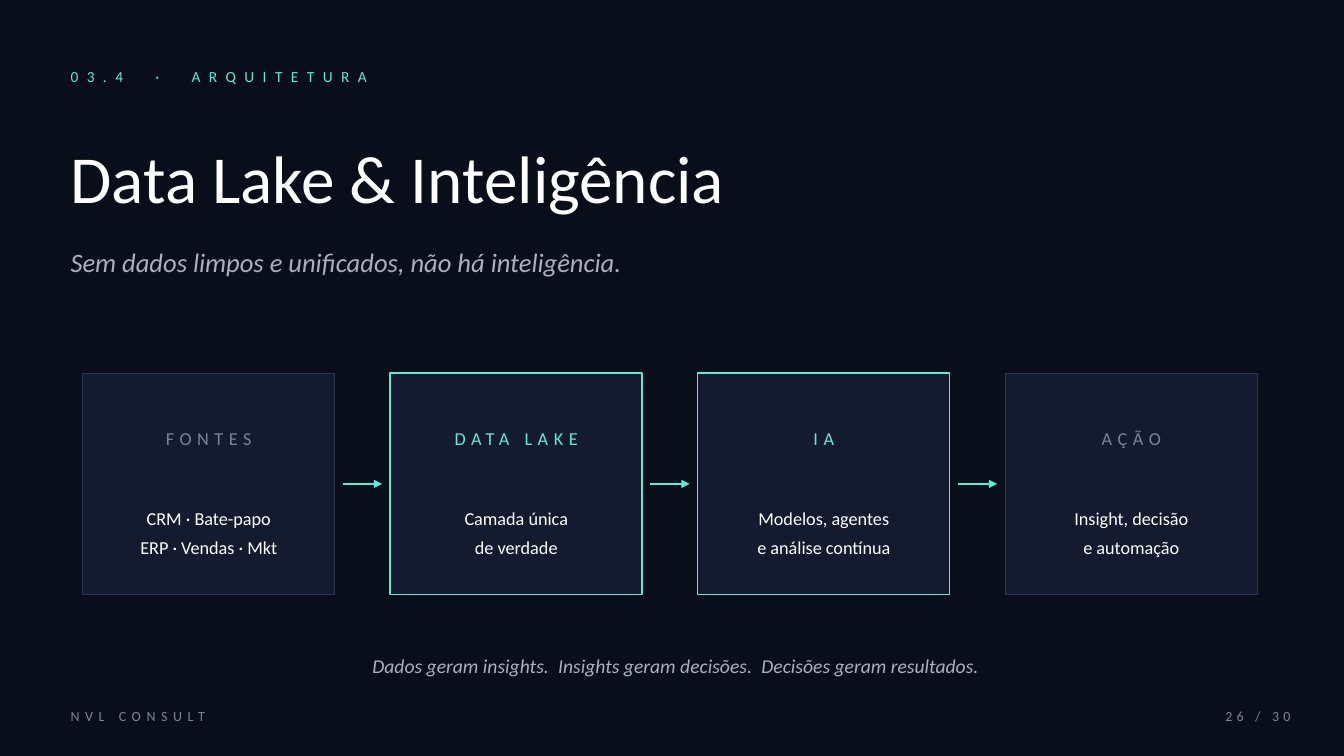
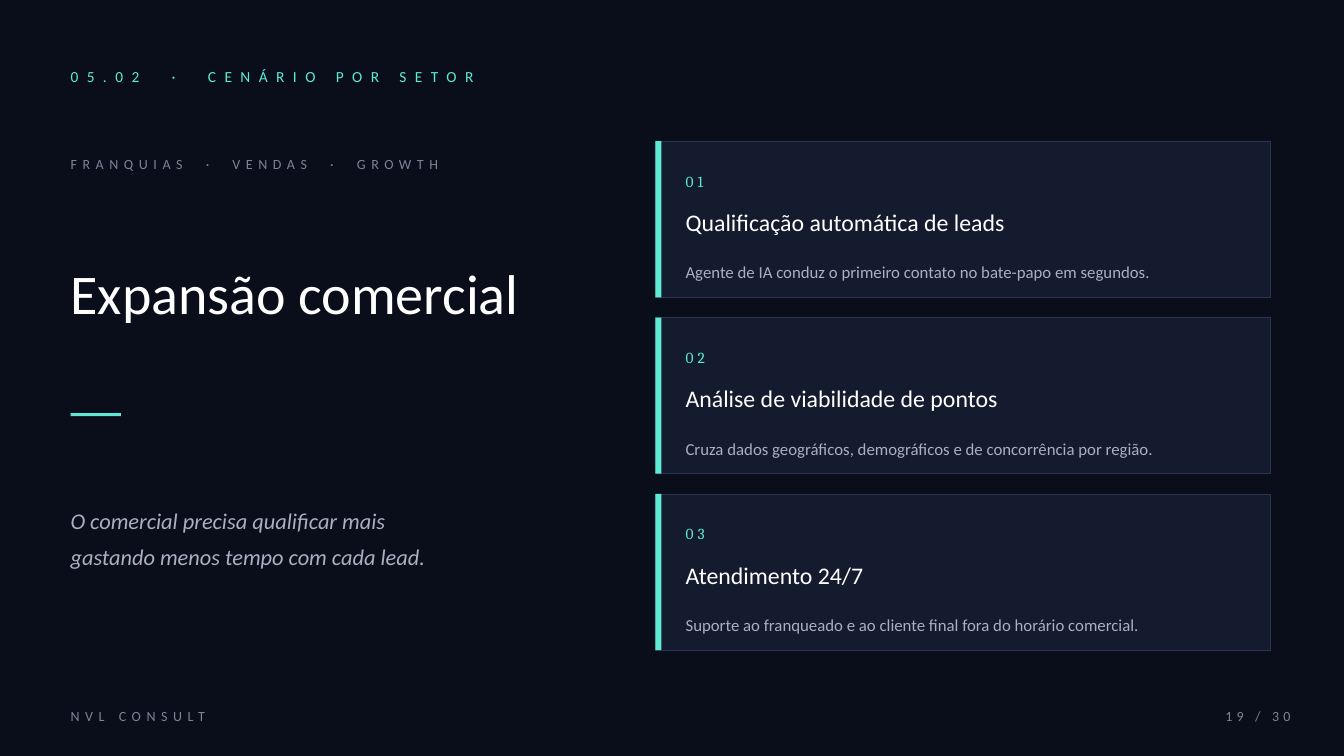
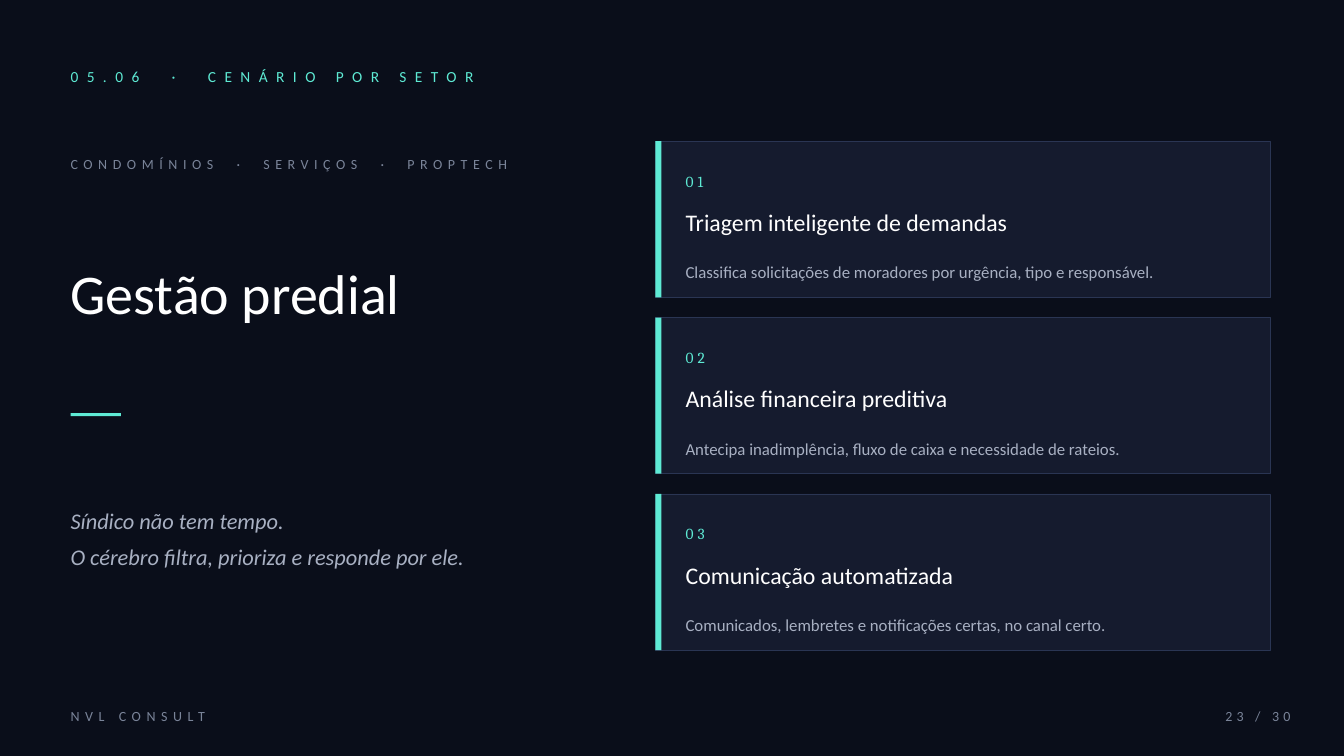
from dataclasses import dataclass

from lxml import etree
from pptx import Presentation
from pptx.dml.color import RGBColor
from pptx.enum.shapes import MSO_CONNECTOR, MSO_SHAPE
from pptx.enum.text import MSO_ANCHOR, MSO_AUTO_SIZE, PP_ALIGN
from pptx.oxml.ns import qn
from pptx.util import Pt

LEFT, CENTER, RIGHT = PP_ALIGN.LEFT, PP_ALIGN.CENTER, PP_ALIGN.RIGHT
MIDDLE = MSO_ANCHOR.MIDDLE
NO_AUTOFIT = MSO_AUTO_SIZE.NONE
RECTANGLE = MSO_SHAPE.RECTANGLE
STRAIGHT = MSO_CONNECTOR.STRAIGHT

PX = 9144  # 100 px to the inch
SPACE_WIDTH = 0.23  # width of a space, in ems

COLORS = {
    "background": "0A0E1A",
    "card": "151B2E",
    "border": "2A3553",
    "accent": "5EEAD4",
    "white": "FFFFFF",
    "soft": "A8B0C2",
    "muted": "7A8499",
}


@dataclass(frozen=True)
class Style:
    size: int
    color: str
    align: int = LEFT
    spacing: int = 0
    italic: bool = False
    leading: float = 1.0
    font: str = "Calibri"


STYLES = {
    "section": Style(11, "accent", spacing=6),
    "title": Style(48, "white"),
    "subtitle": Style(19, "soft", italic=True),
    "step": Style(13, "muted", CENTER, spacing=4),
    "step_accent": Style(13, "accent", CENTER, spacing=4),
    "step_detail": Style(13, "white", CENTER, leading=1.35),
    "closing": Style(14, "soft", CENTER, italic=True),
    "label": Style(10, "muted", spacing=4),
    "page": Style(10, "muted", RIGHT, spacing=3),
    "sector": Style(40, "white"),
    "quote": Style(16, "soft", italic=True, leading=1.35),
    "number": Style(11, "accent", spacing=3, font="Cambria"),
    "card_title": Style(17, "white"),
    "card_detail": Style(12, "soft", leading=1.25),
}


def rgb(name):
    return RGBColor.from_string(COLORS[name])


# Text
def add_run(paragraph, text, style, spacing):
    run = paragraph.add_run()
    run.text = text
    run.font.name = style.font
    run.font.size = Pt(style.size)
    run.font.italic = style.italic
    run.font.color.rgb = rgb(style.color)
    if spacing:
        run._r.get_or_add_rPr().set("spc", str(round(spacing * 100)))


def write(shape, lines, style):
    """Write one paragraph per line; the parts of a tuple get wide gaps."""
    frame = shape.text_frame
    frame.word_wrap = True
    frame.auto_size = NO_AUTOFIT
    frame.vertical_anchor = MIDDLE
    frame.margin_left = frame.margin_top = 0
    frame.margin_right = frame.margin_bottom = 0
    wide_gap = 2 * style.spacing + SPACE_WIDTH * style.size
    for index, line in enumerate(lines):
        paragraph = frame.add_paragraph() if index else frame.paragraphs[0]
        paragraph.alignment = style.align
        paragraph.line_spacing = style.leading
        paragraph.space_before = Pt(0)
        parts = line if isinstance(line, tuple) else (line,)
        for position, part in enumerate(parts):
            if position:
                add_run(paragraph, " ", style, wide_gap)
            add_run(paragraph, part, style, style.spacing)


def add_text(slide, box, lines, style_name):
    shape = slide.shapes.add_textbox(*(value * PX for value in box))
    write(shape, lines, STYLES[style_name])


def fill_placeholder(shape, box, lines, style_name):
    shape.left, shape.top, shape.width, shape.height = (v * PX for v in box)
    write(shape, lines, STYLES[style_name])
    for paragraph in shape.text_frame.paragraphs:
        properties = paragraph._p.get_or_add_pPr()
        properties.set("marL", "0")
        properties.set("indent", "0")
        etree.SubElement(properties, qn("a:buNone"))


# Shapes
def add_rectangle(slide, box, fill, border=None, width=0.5):
    shape = slide.shapes.add_shape(RECTANGLE, *(value * PX for value in box))
    shape.shadow.inherit = False
    shape.fill.solid()
    shape.fill.fore_color.rgb = rgb(fill)
    if border:
        shape.line.color.rgb = rgb(border)
        shape.line.width = Pt(width)
    else:
        shape.line.fill.background()


def add_arrow(slide, start, end, y):
    connector = slide.shapes.add_connector(
        STRAIGHT, start * PX, y * PX, end * PX, y * PX)
    connector.line.color.rgb = rgb("accent")
    connector.line.width = Pt(1.5)
    properties = connector._element.spPr
    etree.SubElement(properties.find(qn("a:ln")), qn("a:tailEnd"), type="triangle")
    etree.SubElement(properties, qn("a:effectLst"))


# Parts shared by every slide
def add_base_slide(presentation, section, page):
    slide = presentation.slides.add_slide(presentation.slide_layouts[1])
    add_text(slide, (70, 60, 800, 32), [section], "section")
    add_text(slide, (70, 695, 500, 30), ["NVL CONSULT"], "label")
    add_text(slide, (1160, 695, 120, 30), [f"{page} / 30"], "page")
    return slide


# Architecture slide
def add_step(slide, box, name, details, highlighted):
    left, top, width, height = box
    if highlighted:
        add_rectangle(slide, box, "card", "accent", 1)
    else:
        add_rectangle(slide, box, "card", "border")
    name_style = "step_accent" if highlighted else "step"
    add_text(slide, (left + 20, top + 45, width - 40, 40), [name], name_style)
    add_text(slide, (left + 20, top + 105, width - 40, 100), details, "step_detail")


def add_flow(slide, box, steps, gap=55, inset=8):
    left, top, width, height = box
    step_width = (width - gap * (len(steps) - 1)) // len(steps)
    for index, (name, details, highlighted) in enumerate(steps):
        x = left + index * (step_width + gap)
        if index:
            add_arrow(slide, x - gap + inset, x - inset, top + height // 2)
        add_step(slide, (x, top, step_width, height), name, details, highlighted)


def build_architecture(presentation):
    slide = add_base_slide(presentation, ("03.4", "·", "ARQUITETURA"), 26)
    fill_placeholder(slide.shapes.title, (70, 125, 1200, 100),
                     ["Data Lake & Inteligência"], "title")
    fill_placeholder(slide.placeholders[1], (70, 235, 1200, 50),
                     ["Sem dados limpos e unificados, não há inteligência."],
                     "subtitle")
    add_flow(slide, (82, 370, 1165, 220), [
        ("FONTES", ["CRM · Bate-papo", "ERP · Vendas · Mkt"], False),
        ("DATA LAKE", ["Camada única", "de verdade"], True),
        ("IA", ["Modelos, agentes", "e análise contínua"], True),
        ("AÇÃO", ["Insight, decisão", "e automação"], False),
    ])
    closing = ("Dados geram insights.", "Insights geram decisões.",
               "Decisões geram resultados.")
    add_text(slide, (70, 640, 1200, 40), [closing], "closing")


# Sector slides
def add_card(slide, box, number, title, detail):
    left, top, width, height = box
    add_rectangle(slide, box, "card", "border")
    add_rectangle(slide, (left, top, 6, height), "accent")
    add_text(slide, (left + 30, top + 22, 80, 35), [f"{number:02}"], "number")
    add_text(slide, (left + 30, top + 55, width - 50, 50), [title], "card_title")
    add_text(slide, (left + 30, top + 105, width - 50, 45), [detail], "card_detail")


def add_cards(slide, box, cards, gap=20):
    left, top, width, height = box
    card_height = (height - gap * (len(cards) - 1)) // len(cards)
    for index, (title, detail) in enumerate(cards):
        y = top + index * (card_height + gap)
        add_card(slide, (left, y, width, card_height), index + 1, title, detail)


def build_sector(presentation, code, page, areas, title, quote, cards):
    slide = add_base_slide(presentation, (code, "·", "CENÁRIO POR SETOR"), page)
    add_text(slide, (70, 145, 520, 35), [areas], "label")
    fill_placeholder(slide.shapes.title, (70, 190, 530, 200), [title], "sector")
    add_rectangle(slide, (70, 410, 50, 3), "accent")
    fill_placeholder(slide.placeholders[1], (70, 430, 510, 200), quote, "quote")
    add_cards(slide, (650, 140, 610, 505), cards)


def main():
    presentation = Presentation()
    presentation.slide_width, presentation.slide_height = 1333 * PX, 750 * PX
    background = presentation.slide_master.background.fill
    background.solid()
    background.fore_color.rgb = rgb("background")

    build_architecture(presentation)
    build_sector(
        presentation, "05.02", 19,
        ("FRANQUIAS", "·", "VENDAS", "·", "GROWTH"),
        "Expansão comercial",
        ["O comercial precisa qualificar mais",
         "gastando menos tempo com cada lead."],
        [("Qualificação automática de leads",
          "Agente de IA conduz o primeiro contato no bate-papo em segundos."),
         ("Análise de viabilidade de pontos",
          "Cruza dados geográficos, demográficos e de concorrência por região."),
         ("Atendimento 24/7",
          "Suporte ao franqueado e ao cliente final fora do horário comercial.")])
    build_sector(
        presentation, "05.06", 23,
        ("CONDOMÍNIOS", "·", "SERVIÇOS", "·", "PROPTECH"),
        "Gestão predial",
        ["Síndico não tem tempo.",
         "O cérebro filtra, prioriza e responde por ele."],
        [("Triagem inteligente de demandas",
          "Classifica solicitações de moradores por urgência, tipo e responsável."),
         ("Análise financeira preditiva",
          "Antecipa inadimplência, fluxo de caixa e necessidade de rateios."),
         ("Comunicação automatizada",
          "Comunicados, lembretes e notificações certas, no canal certo.")])
    presentation.save("out.pptx")


if __name__ == "__main__":
    main()
